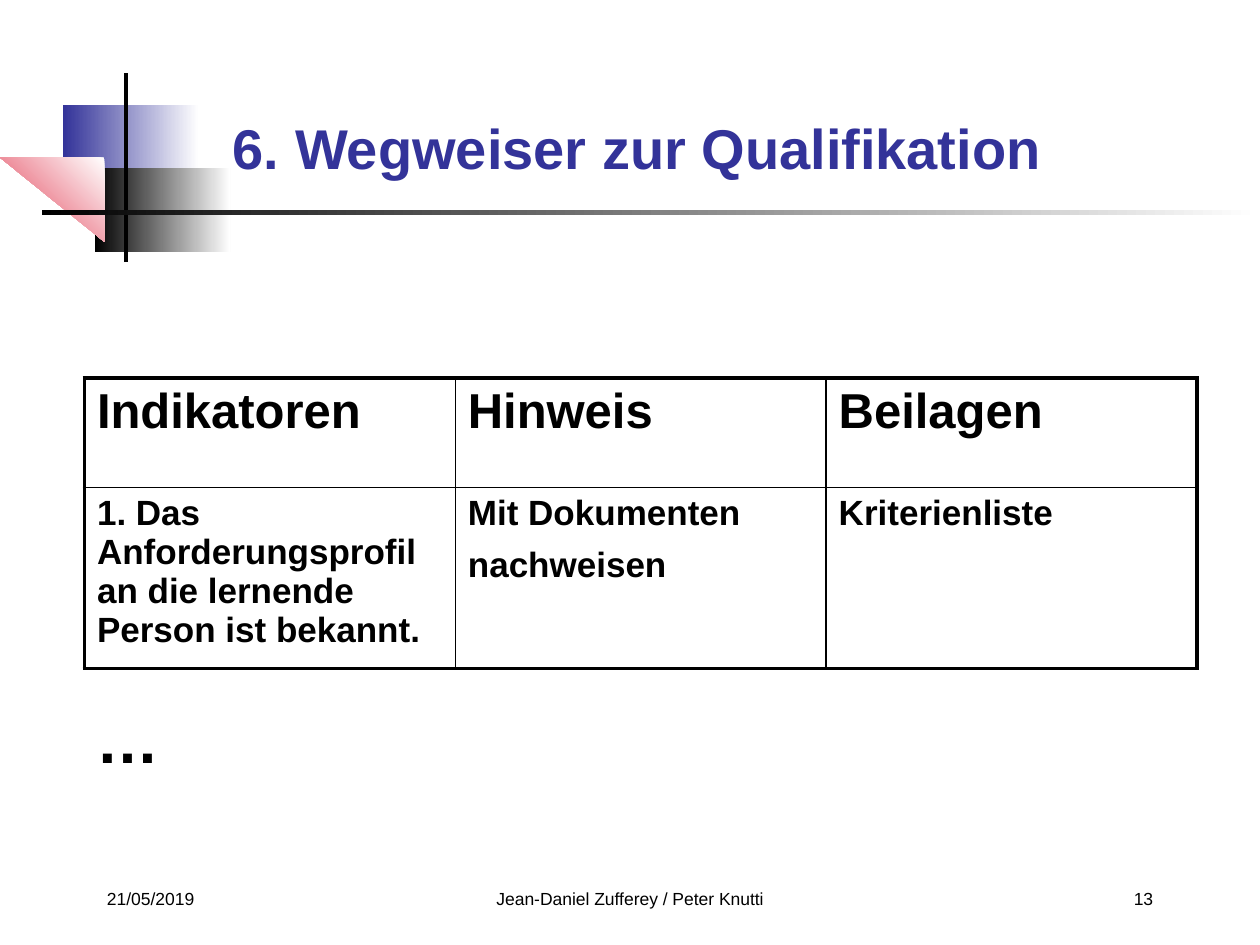
from dataclasses import dataclass

from lxml import etree
from pptx import Presentation
from pptx.dml.color import RGBColor
from pptx.enum import shapes, text
from pptx.oxml import ns
from pptx.util import Inches, Pt


@dataclass(frozen=True)
class Theme:
    """Colours, font and type sizes of the slide."""
    font: str = "Arial"
    black: str = "000000"
    white: str = "FFFFFF"
    blue: str = "333399"
    red: str = "E0334B"
    title: int = 32
    head: int = 28
    body: int = 20
    foot: int = 10
    dots: int = 36
    thick: float = 2.25
    thin: float = 1


THEME = Theme()
LEFT, MID, RIGHT = text.PP_ALIGN.LEFT, text.PP_ALIGN.CENTER, text.PP_ALIGN.RIGHT
HEADS = ["Indikatoren", "Hinweis", "Beilagen"]
CELLS = ["1. Das Anforderungsprofil an die lernende Person ist bekannt.",
         "Mit Dokumenten nachweisen", "Kriterienliste"]


def add_run(para, words, size, color=THEME.black, bold=False):
    """Add one styled run to a paragraph."""
    run = para.add_run()
    run.text = words
    run.font.name, run.font.size, run.font.bold = THEME.font, Pt(size), bold
    run.font.color.rgb = RGBColor.from_string(color)


def add_label(slide, box, words, size, color=THEME.black, bold=False,
              align=LEFT, anchor=text.MSO_ANCHOR.TOP, wrap=True):
    """Place one line of text in a box."""
    frame = slide.shapes.add_textbox(*map(Inches, box)).text_frame
    frame.word_wrap, frame.vertical_anchor = wrap, anchor
    para = frame.paragraphs[0]
    para.alignment = align
    add_run(para, words, size, color, bold)


def add_fade(slide, kind, box, start, end, angle=0):
    """Place a shape that fades from one colour to another."""
    shape = slide.shapes.add_shape(kind, *map(Inches, box))
    shape.shadow.inherit = False
    shape.line.fill.background()
    shape.fill.gradient()
    shape.fill.gradient_angle = angle
    for stop, color in zip(shape.fill.gradient_stops, (start, end)):
        stop.color.rgb = RGBColor.from_string(color)
    return shape


def add_motif(slide, box):
    """Draw the faded blocks, the triangle and the crossing lines."""
    x, y, w, h = box
    rect = shapes.MSO_SHAPE.RECTANGLE
    add_fade(slide, rect, (x + 0.5, y + 0.25, 1.08, 0.75), THEME.blue, THEME.white)
    add_fade(slide, rect, (x + 0.75, y + 0.75, 1.08, 0.67), THEME.black, THEME.white)
    corner = add_fade(slide, shapes.MSO_SHAPE.RIGHT_TRIANGLE,
                      (x, y + 0.67, 0.83, 0.67), THEME.white, THEME.red, 45)
    for flip in ("flipH", "flipV"):
        corner._element.spPr.xfrm.set(flip, "1")
    line = slide.shapes.add_connector(
        shapes.MSO_CONNECTOR.STRAIGHT,
        *map(Inches, (x + 1, y + h, x + 1, y)))
    line.line.width = Pt(THEME.thick)
    line.line.color.rgb = RGBColor.from_string(THEME.black)
    etree.SubElement(line._element.spPr, ns.qn("a:effectLst"))
    add_fade(slide, rect, (x + 0.33, y + 1.09, w - 0.33, 0.04),
             THEME.black, THEME.white)


def set_edge(cell, side, width):
    """Draw one border of a table cell."""
    edge = etree.SubElement(cell._tc.get_or_add_tcPr(), ns.qn(f"a:ln{side}"),
                            w=str(Pt(width)))
    fill = etree.SubElement(edge, ns.qn("a:solidFill"))
    etree.SubElement(fill, ns.qn("a:srgbClr"), val=THEME.black)


def add_grid(slide, box, rows, sizes, heights):
    """Place the table with a thick frame and thin inner lines."""
    count, wide = len(rows), len(rows[0])
    table = slide.shapes.add_table(count, wide, *map(Inches, box)).table
    table.first_row = table.horz_banding = False
    for col in table.columns:
        col.width = Inches(box[2] / wide)
    for r, (row, size, height) in enumerate(zip(rows, sizes, heights)):
        table.rows[r].height = Inches(height)
        for c, words in enumerate(row):
            cell = table.cell(r, c)
            outer = {"L": c == 0, "R": c == wide - 1,
                     "T": r == 0, "B": r == count - 1}
            for side, edge in outer.items():
                set_edge(cell, side, THEME.thick if edge else THEME.thin)
            cell.fill.background()
            add_run(cell.text_frame.paragraphs[0], words, size, bold=True)
    add_run(table.cell(1, 1).text_frame.paragraphs[0], " ", THEME.head)


def add_foot(slide, box):
    """Place date, authors and page number along the foot."""
    x, y, w, h = box
    parts = [("21/05/2019", 0, 2.08, LEFT),
             ("Jean-Daniel Zufferey / Peter Knutti", (w - 3.17) / 2, 3.17, MID),
             ("13", w - 2.08, 2.08, RIGHT)]
    for words, shift, width, align in parts:
        add_label(slide, (x + shift, y, width, h), words, THEME.foot, align=align)


def main():
    """Build the slide and save it."""
    deck = Presentation()
    deck.slide_width, deck.slide_height = Inches(10), Inches(7.5)
    slide = deck.slides.add_slide(deck.slide_layouts[6])
    add_motif(slide, (0, 0.58, 10, 1.5))
    add_foot(slide, (0.75, 7, 8.5, 0.33))
    add_label(slide, (1.75, 0.75, 7.5, 0.83), "6. Wegweiser zur Qualifikation",
              THEME.title, THEME.blue, True, anchor=text.MSO_ANCHOR.MIDDLE)
    add_grid(slide, (0.67, 3, 8.83, 2.3), [HEADS, CELLS],
             (THEME.head, THEME.body), (0.87, 1.43))
    add_label(slide, (0.67, 5.51, 0.7, 0.7), "…", THEME.dots, bold=True, wrap=False)
    deck.save("out.pptx")


if __name__ == "__main__":
    main()
